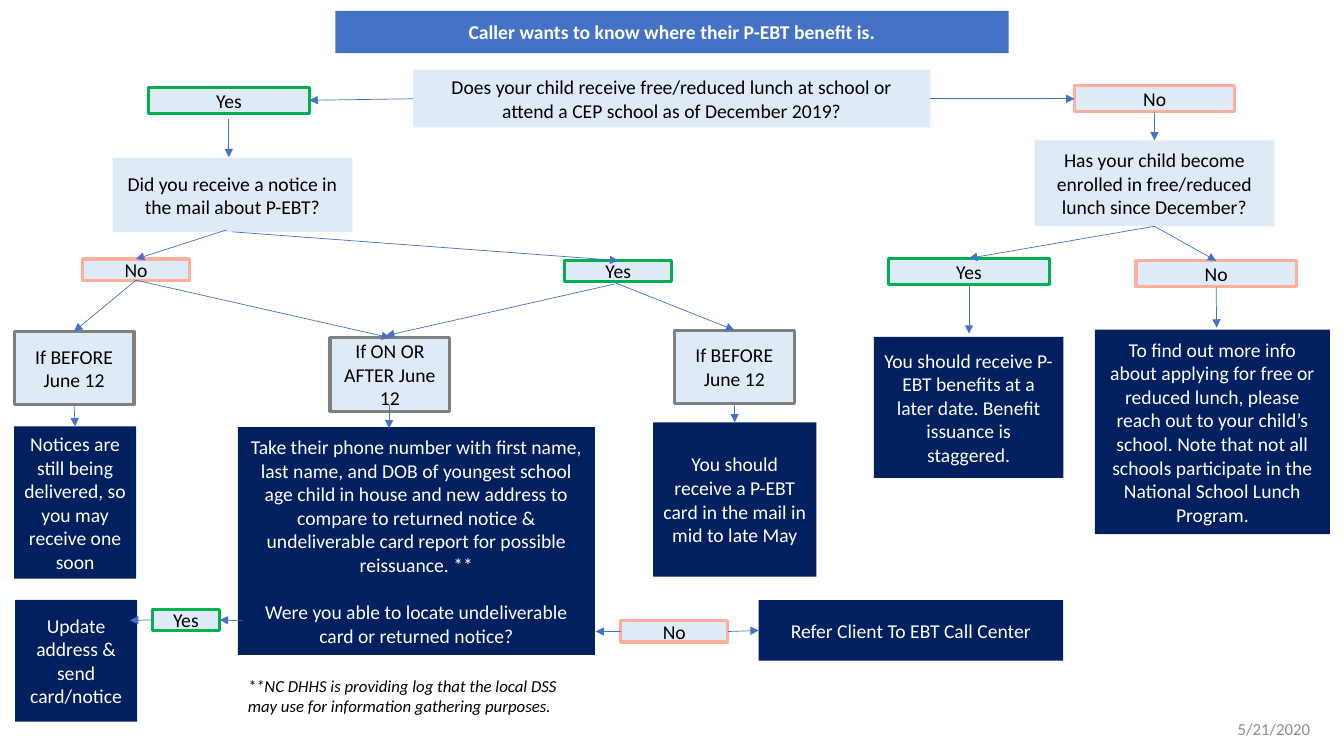
from dataclasses import dataclass
from typing import NamedTuple

from pptx import Presentation
from pptx.dml.color import RGBColor
from pptx.enum.shapes import MSO_CONNECTOR, MSO_SHAPE
from pptx.enum.text import MSO_ANCHOR, PP_ALIGN
from pptx.oxml.ns import qn
from pptx.util import Inches, Pt
from lxml.etree import SubElement

COLUMN = Inches(13.333) / 40
ROW = Inches(7.5) / 30
TOP, LEFT, BOTTOM, RIGHT = range(4)

COLORS = {
    "blue": "4472C4", "pale": "DEEBF7", "navy": "002060", "green": "00B050",
    "salmon": "FFAE9B", "grey": "808080", "black": "000000", "white": "FFFFFF",
    "date": "8C8C8C",
}


class Style(NamedTuple):
    fill: str
    font: str
    line: str | None = None


class Area(NamedTuple):
    column: float
    row: float
    columns: float
    rows: float


class Point(NamedTuple):
    column: float
    row: float


class Join(NamedTuple):
    box: str
    side: int


@dataclass
class Box:
    key: str
    style: str
    area: Area
    paragraphs: tuple[str, ...]


@dataclass
class Arrow:
    start: Point | Join
    end: Point | Join


STYLES = {
    "heading": Style("blue", "white"),
    "question": Style("pale", "black"),
    "yes": Style("pale", "black", "green"),
    "no": Style("pale", "black", "salmon"),
    "date": Style("pale", "black", "grey"),
    "action": Style("navy", "white"),
}

HEADING = Box("heading", "heading", Area(9.98, 0.43, 20.04, 1.68),
              ("Caller wants to know where their P-EBT benefit is.",))

BOXES = [
    Box("lunch", "question", Area(12.3, 2.78, 15.39, 2.28),
        ("Does your child receive free/reduced lunch at school or\v"
         "attend a CEP school as of December 2019?",)),
    Box("lunch yes", "yes", Area(4.42, 3.46, 4.79, 1.04), ("Yes",)),
    Box("lunch no", "no", Area(31.98, 3.4, 4.77, 1.04), ("No",)),
    Box("notice", "question", Area(3.35, 6.28, 7.14, 2.92),
        ("Did you receive a notice in the mail about P-EBT?",)),
    Box("notice no", "no", Area(2.46, 10.28, 3.18, 0.84), ("No",)),
    Box("notice yes", "yes", Area(16.81, 10.34, 3.18, 0.84), ("Yes",)),
    Box("before left", "date", Area(0.42, 13.15, 3.57, 2.92), ("If BEFORE June 12",)),
    Box("after", "date", Area(9.82, 13.4, 3.57, 2.92), ("If ON OR AFTER June 12",)),
    Box("before right", "date", Area(20.07, 13.1, 3.57, 2.92), ("If BEFORE June 12",)),
    Box("delivery", "action", Area(0.42, 16.92, 3.63, 6.04),
        ("Notices are still being delivered, so you may receive one soon",)),
    Box("phone", "action", Area(7.08, 16.95, 10.63, 9.04),
        ("Take their phone number with first name, last name, and DOB of youngest "
         "school age child in house and new address to compare to returned notice & "
         "undeliverable card report for possible reissuance. **",
         "Were you able to locate undeliverable card or returned notice?")),
    Box("card", "action", Area(19.44, 16.76, 4.86, 6.12),
        ("You should receive a P-EBT card in the mail in mid to late May",)),
    Box("enrolled", "question", Area(30.79, 5.57, 7.14, 3.41),
        ("Has your child become enrolled in free/reduced lunch since December?",)),
    Box("enrolled yes", "yes", Area(26.45, 10.25, 4.78, 1.04), ("Yes",)),
    Box("enrolled no", "no", Area(33.81, 10.35, 4.77, 1.04), ("No",)),
    Box("later", "action", Area(26.01, 13.37, 5.64, 5.6),
        ("You should receive P-EBT benefits at a later date. Benefit issuance is "
         "staggered.",)),
    Box("apply", "action", Area(32.59, 13.08, 6.99, 8.12),
        ("To find out more info about applying for free or reduced lunch, please reach "
         "out to your child’s school. Note that not all schools participate in the "
         "National School Lunch Program.",)),
    Box("refer", "action", Area(22.58, 23.82, 9.06, 2.4), ("Refer Client To EBT Call Center",)),
    Box("located no", "no", Area(18.48, 24.64, 3.18, 0.84), ("No",)),
    Box("update", "action", Area(0.45, 23.8, 3.63, 4.84),
        ("Update address & send card/notice",)),
    Box("located yes", "yes", Area(4.53, 24.18, 2.01, 0.84), ("Yes",)),
]

ARROWS = [
    Arrow(Join("lunch", LEFT), Join("lunch yes", RIGHT)),
    Arrow(Join("lunch", RIGHT), Join("lunch no", LEFT)),
    Arrow(Point(6.81, 4.72), Point(6.81, 6.24)),
    Arrow(Join("lunch no", BOTTOM), Join("enrolled", TOP)),
    Arrow(Point(6.75, 9.12), Join("notice no", TOP)),
    Arrow(Join("notice", BOTTOM), Join("notice yes", TOP)),
    Arrow(Join("notice no", BOTTOM), Join("before left", TOP)),
    Arrow(Join("notice no", BOTTOM), Join("after", TOP)),
    Arrow(Point(18.27, 11.28), Point(11.49, 13.32)),
    Arrow(Point(18.27, 11.2), Join("before right", TOP)),
    Arrow(Join("before left", BOTTOM), Join("delivery", TOP)),
    Arrow(Point(11.58, 16.08), Point(11.58, 17)),
    Arrow(Join("before right", BOTTOM), Join("card", TOP)),
    Arrow(Join("enrolled", BOTTOM), Join("enrolled yes", TOP)),
    Arrow(Join("enrolled", BOTTOM), Join("enrolled no", TOP)),
    Arrow(Join("enrolled yes", BOTTOM), Point(28.84, 13.24)),
    Arrow(Join("enrolled no", BOTTOM), Point(36.21, 13)),
    Arrow(Join("located no", RIGHT), Join("refer", LEFT)),
    Arrow(Join("located no", LEFT), Point(17.73, 25.06)),
    Arrow(Join("located yes", LEFT), Point(3.87, 24.62)),
    Arrow(Point(7.23, 24.64), Join("located yes", RIGHT)),
]


def color(name: str) -> RGBColor:
    return RGBColor.from_string(COLORS[name])


def place(area: Area) -> list[int]:
    return [round(area.column * COLUMN), round(area.row * ROW),
            round(area.columns * COLUMN), round(area.rows * ROW)]


def write(shape, paragraphs: tuple[str, ...], *, font: str, size: float = 14,
          bold: bool = False, italic: bool = False, align=PP_ALIGN.CENTER,
          anchor=MSO_ANCHOR.MIDDLE, gap: float = 17) -> None:
    frame = shape.text_frame
    frame.word_wrap = True
    frame.vertical_anchor = anchor
    for index, text in enumerate(paragraphs):
        para = frame.add_paragraph() if index else frame.paragraphs[0]
        para.text = text
        para.alignment = align
        para.space_before = Pt(gap if index else 0)
        for span in para.runs:
            span.font.name = "Calibri"
            span.font.size = Pt(size)
            span.font.bold = bold
            span.font.italic = italic
            span.font.color.rgb = color(font)


def draw_box(page, box: Box):
    style = STYLES[box.style]
    shape = page.shapes.add_shape(MSO_SHAPE.RECTANGLE, *place(box.area))
    shape.shadow.inherit = False
    shape.fill.solid()
    shape.fill.fore_color.rgb = color(style.fill)
    if style.line:
        shape.line.color.rgb = color(style.line)
        shape.line.width = Pt(2.25)
    else:
        shape.line.fill.background()
    write(shape, box.paragraphs, font=style.font)
    return shape


def draw_heading(page, box: Box) -> None:
    title = page.shapes.title
    title.left, title.top, title.width, title.height = place(box.area)
    title.fill.solid()
    title.fill.fore_color.rgb = color(STYLES[box.style].fill)
    write(title, box.paragraphs, font=STYLES[box.style].font, bold=True)


def draw_arrow(page, arrow: Arrow, shapes: dict) -> None:
    line = page.shapes.add_connector(MSO_CONNECTOR.STRAIGHT, 0, 0, 0, 0)
    if isinstance(arrow.start, Join):
        line.begin_connect(shapes[arrow.start.box], arrow.start.side)
    else:
        line.begin_x, line.begin_y = round(arrow.start.column * COLUMN), round(arrow.start.row * ROW)
    if isinstance(arrow.end, Join):
        line.end_connect(shapes[arrow.end.box], arrow.end.side)
    else:
        line.end_x, line.end_y = round(arrow.end.column * COLUMN), round(arrow.end.row * ROW)
    line.line.color.rgb = color("blue")
    line.line.width = Pt(0.5)
    SubElement(line.line._get_or_add_ln(), qn("a:tailEnd"), type="triangle")
    SubElement(line._element.spPr, qn("a:effectLst"))


def main() -> None:
    deck = Presentation()
    deck.slide_width, deck.slide_height = round(40 * COLUMN), round(30 * ROW)
    page = deck.slides.add_slide(deck.slide_layouts[5])
    draw_heading(page, HEADING)
    shapes = {box.key: draw_box(page, box) for box in BOXES}
    for arrow in ARROWS:
        draw_arrow(page, arrow, shapes)
    note = page.shapes.add_textbox(*place(Area(7.08, 26.6, 10.53, 2)))
    write(note, ("**NC DHHS is providing log that the local DSS may use for information "
                 "gathering purposes.",), font="black", size=12, italic=True,
          align=PP_ALIGN.LEFT, anchor=MSO_ANCHOR.TOP)
    date = page.shapes.add_textbox(*place(Area(36.54, 28.12, 2.79, 1.6)))
    write(date, ("5/21/2020",), font="date", size=12, align=PP_ALIGN.LEFT)
    deck.save("out.pptx")


if __name__ == "__main__":
    main()
